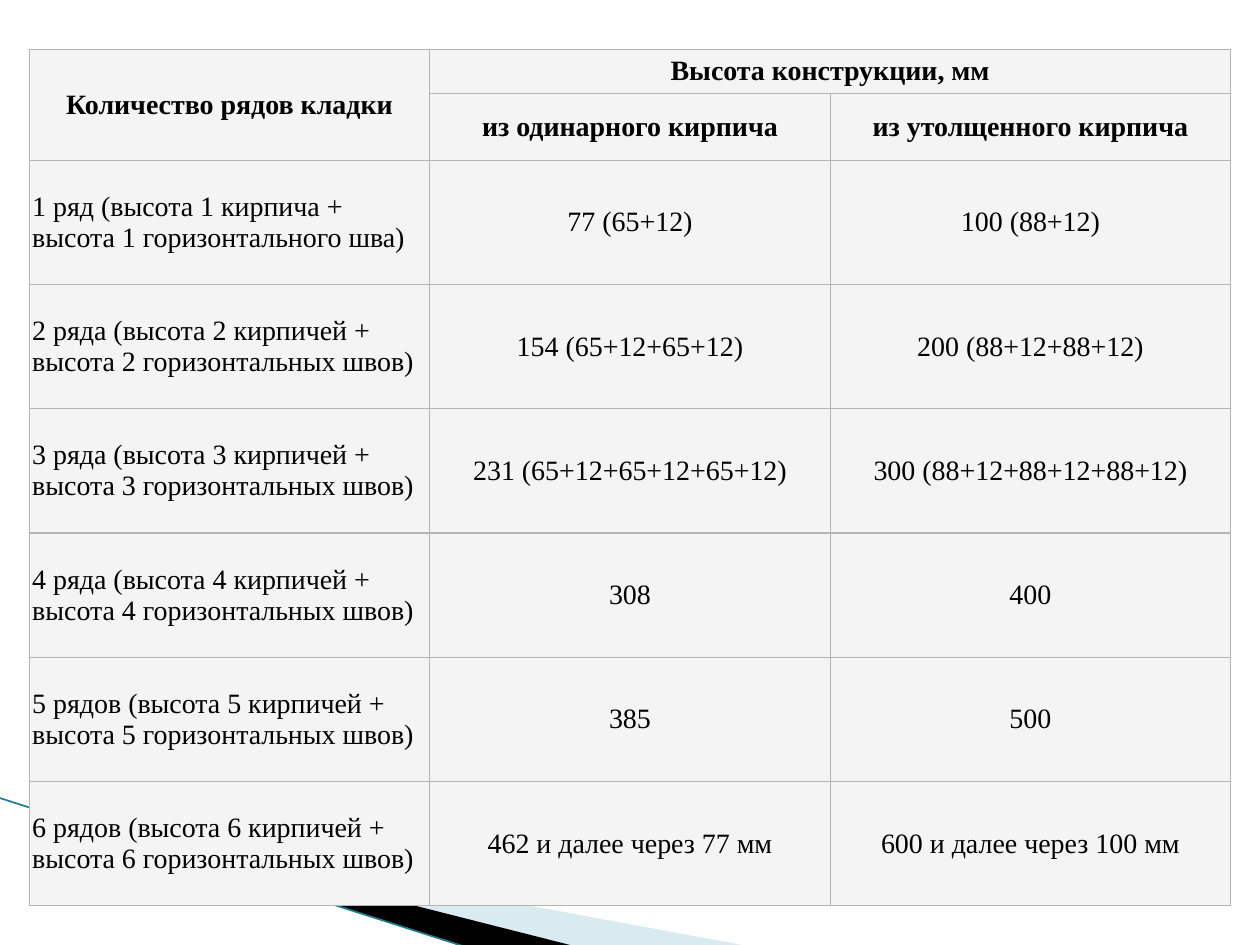
from copy import deepcopy

from lxml import etree
from pptx import Presentation, util as u
from pptx.dml.color import RGBColor
from pptx.enum import text as t
from pptx.enum import shapes as s
from pptx.oxml.ns import qn

Cm = u.Cm
HUE = {"ink": "000000", "cell": "F4F4F4", "edge": "B5B5B5",
       "pale": "A0CBDC", "teal": "1F7A8C"}


def write(cell, words, bold=False, align=t.PP_ALIGN.CENTER, pad=0.08):
    cell.vertical_anchor = t.MSO_ANCHOR.MIDDLE
    cell.margin_left = cell.margin_right = Cm(0.06)
    cell.margin_top = cell.margin_bottom = Cm(pad)
    para = cell.text_frame.paragraphs[0]
    para.text = words
    para.alignment = align
    for run in para.runs:
        run.font.name = "Times New Roman"
        run.font.size = u.Pt(16)
        run.font.bold = bold
        run.font.color.rgb = RGBColor.from_string(HUE["ink"])
    # Line breaks take the run format, so line height stays even
    for br in para._p.findall(qn("a:br")):
        br.append(deepcopy(para.runs[0]._r.rPr))


def frame(cell):
    props = cell._tc.get_or_add_tcPr()
    for side in ("lnL", "lnR", "lnT", "lnB"):
        edge = etree.SubElement(props, qn("a:" + side), w=str(u.Pt(0.75)))
        fill = etree.SubElement(edge, qn("a:solidFill"))
        etree.SubElement(fill, qn("a:srgbClr"), val=HUE["edge"])
    cell.fill.solid()
    cell.fill.fore_color.rgb = RGBColor.from_string(HUE["cell"])


deck = Presentation()
deck.slide_width, deck.slide_height = Cm(25.4), Cm(19.05)
slide = deck.slides.add_slide(deck.slide_layouts[6])

# Corner wedges: each outline reaches beyond its own box
wedges = [
    ("pale", 40, (1.98, 13.89, 10.57, 4.01),
     [(1.4, 16.54), (15.11, 19.08), (11.58, 19.08), (1.4, 16.51)]),
    ("ink", 100, (-0.15, 16.08, 10.57, 2.34),
     [(1.35, 16.48), (11.61, 19.08), (9.45, 19.1), (1.37, 16.51)]),
]
for hue, alpha, box, spots in wedges:
    spots = [(Cm(x), Cm(y)) for x, y in spots]
    pen = slide.shapes.build_freeform(*spots[0])
    pen.add_line_segments(spots[1:], close=True)
    wedge = pen.convert_to_shape()
    left, top, wide, high = map(Cm, box)
    dx, dy = wedge.left - left, wedge.top - top
    wedge.left, wedge.top, wedge.width, wedge.height = left, top, wide, high
    track = wedge._element.spPr.find(".//" + qn("a:pathLst"))[0]
    track.set("w", str(wide))
    track.set("h", str(high))
    for spot in track.iter(qn("a:pt")):
        spot.set("x", str(int(spot.get("x")) + dx))
        spot.set("y", str(int(spot.get("y")) + dy))
    wedge.shadow.inherit = False
    wedge.line.fill.background()
    wedge.fill.solid()
    wedge.fill.fore_color.rgb = RGBColor.from_string(HUE[hue])
    if alpha < 100:
        tint = wedge._element.spPr.find(".//" + qn("a:srgbClr"))
        etree.SubElement(tint, qn("a:alpha"), val=str(alpha * 1000))

# Corner line
line = slide.shapes.add_connector(
    s.MSO_CONNECTOR.STRAIGHT, Cm(-0.03), Cm(16.08), Cm(9.42), Cm(19.1))
line.line.color.rgb = RGBColor.from_string(HUE["teal"])
line.line.width = u.Pt(0.95)
etree.SubElement(line._element.spPr, qn("a:effectLst"))

# Masonry table
sums = [
    ("77 (65+12)", "100 (88+12)"),
    ("154 (65+12+65+12)", "200 (88+12+88+12)"),
    ("231 (65+12+65+12+65+12)", "300 (88+12+88+12+88+12)"),
    ("308", "400"),
    ("385", "500"),
    ("462 и далее через 77 мм", "600 и далее через 100 мм"),
]
highs = [Cm(0.9), Cm(1.34)] + [Cm(15.03) // len(sums)] * len(sums)
grid = slide.shapes.add_table(
    len(highs), 3, Cm(0.59), Cm(0.99), Cm(24.22), sum(highs)).table
grid.first_row = grid.horz_banding = False
for col in grid.columns:
    col.width = Cm(24.22) // 3
for row, high in zip(grid.rows, highs):
    row.height = high
    for cell in row.cells:
        frame(cell)

# Header
grid.cell(0, 0).merge(grid.cell(1, 0))
grid.cell(0, 1).merge(grid.cell(0, 2))
heads = [(0, 0, "Количество рядов кладки"), (0, 1, "Высота конструкции, мм"),
         (1, 1, "из одинарного кирпича"), (1, 2, "из утолщенного кирпича")]
for r, c, words in heads:
    write(grid.cell(r, c), words, bold=True, pad=0.13)

# Body rows
for n, pair in enumerate(sums, 1):
    rows = "ряд" if n == 1 else "ряда" if n < 5 else "рядов"
    brick = "кирпича" if n == 1 else "кирпичей"
    seam = "горизонтального шва" if n == 1 else "горизонтальных швов"
    write(grid.cell(n + 1, 0),
          f"{n} {rows} (высота {n} {brick} +\nвысота {n} {seam})",
          align=t.PP_ALIGN.LEFT)
    for c, words in enumerate(pair, 1):
        write(grid.cell(n + 1, c), words)

deck.save("out.pptx")
